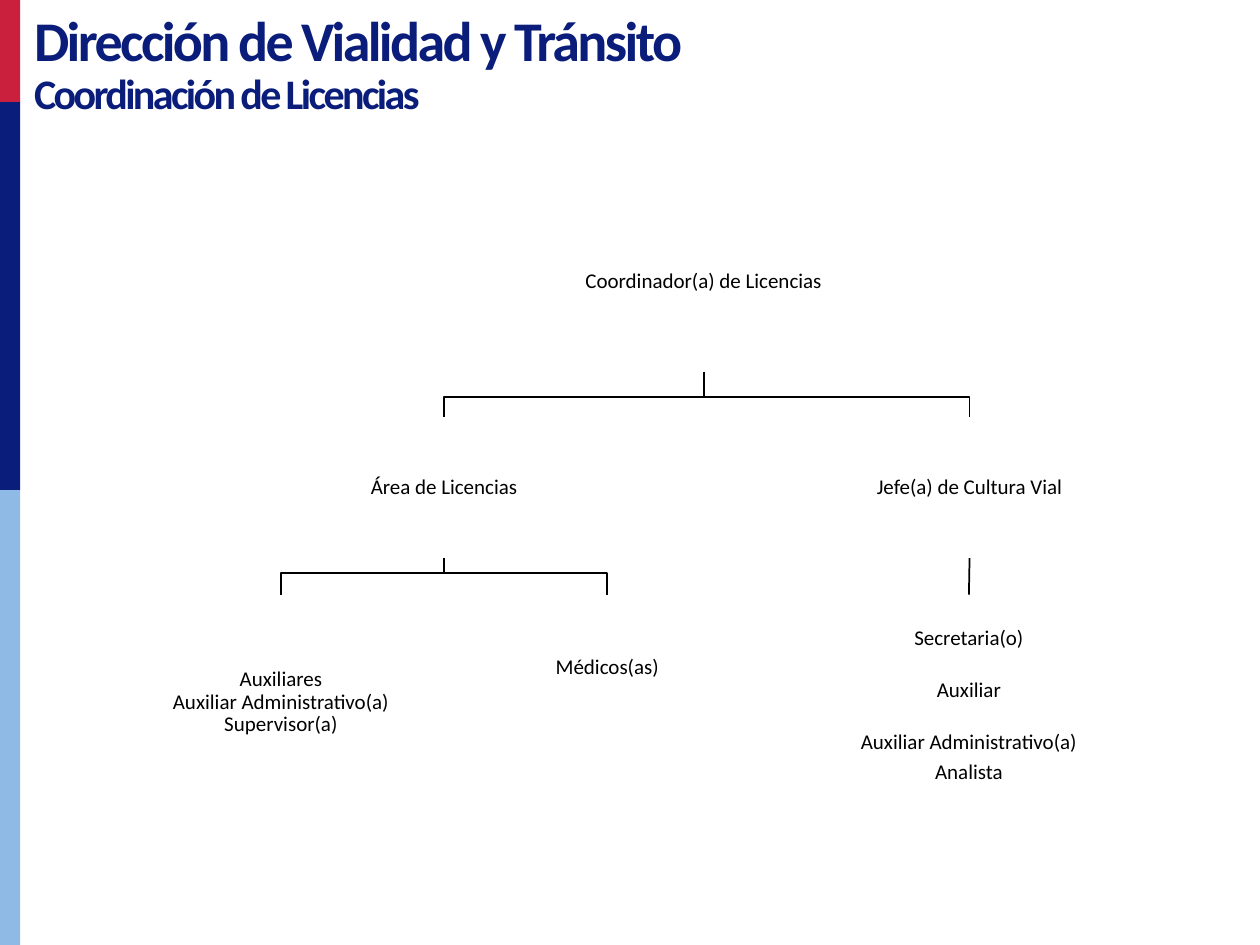
from pptx import Presentation
from pptx.dml.color import RGBColor
from pptx.enum.shapes import MSO_CONNECTOR, MSO_SHAPE
from pptx.enum.text import MSO_ANCHOR, MSO_AUTO_SIZE, PP_ALIGN
from pptx.oxml.ns import qn
from pptx.util import Inches, Pt
from lxml import etree

RECT = MSO_SHAPE.RECTANGLE
STRAIGHT = MSO_CONNECTOR.STRAIGHT
MIDDLE, TOP = MSO_ANCHOR.MIDDLE, MSO_ANCHOR.TOP
CENTER, LEFT = PP_ALIGN.CENTER, PP_ALIGN.LEFT
FONT = "Calibri"
COLORS = {"red": "CA1F3D", "navy": "0A1D7A", "sky": "8FBAE5",
          "white": "FFFFFF", "black": "000000"}


def rgb(name):
    return RGBColor.from_string(COLORS[name])


def add_run(para, text, size, color, bold=False):
    run = para.add_run()
    run.text = text
    font = run.font
    font.name, font.size, font.bold = FONT, Pt(size), bold
    font.color.rgb = rgb(color)
    return run


def add_rect(slide, left, top, width, height, color):
    rect = slide.shapes.add_shape(
        RECT, Inches(left), Inches(top), Inches(width), Inches(height))
    rect.shadow.inherit = False
    rect.fill.solid()
    rect.fill.fore_color.rgb = rgb(color)
    rect.line.fill.background()
    return rect


def add_bars(slide):
    top = 0
    for color, height in (("red", 0.81), ("navy", 3.08), ("sky", 3.61)):
        add_rect(slide, 0, top, 0.16, height, color)
        top += height


def add_title(slide):
    title = slide.shapes.title
    title.left, title.top = Inches(0.17), Inches(0.05)
    title.width, title.height = Inches(7.46), Inches(0.95)
    frame = title.text_frame
    frame.auto_size = MSO_AUTO_SIZE.SHAPE_TO_FIT_TEXT
    frame.vertical_anchor = TOP
    lines = (("Dirección de Vialidad y Tránsito", 32),
             ("Coordinación de Licencias", 24))
    for i, (text, size) in enumerate(lines):
        para = frame.add_paragraph() if i else frame.paragraphs[0]
        para.alignment, para.line_spacing = LEFT, 0.9
        para.space_before = Pt(0)
        run = add_run(para, text, size, "navy", True)
        run.font._element.set("spc", "-150")


def add_box(slide, left, top, width, height, lines, lift=0):
    """Lines are (text, points before); lift is the extra bottom inset."""
    box = add_rect(slide, left, top, width, height, "white")
    frame = box.text_frame
    frame.word_wrap = True
    frame.vertical_anchor = MIDDLE
    frame.margin_left = frame.margin_right = frame.margin_top = Inches(0.01)
    frame.margin_bottom = Inches(0.01 + lift)
    for i, (text, gap) in enumerate(lines):
        para = frame.add_paragraph() if i else frame.paragraphs[0]
        para.alignment, para.line_spacing = CENTER, 0.9
        para.space_before = Pt(gap)
        add_run(para, text, 12, "black")
    return box


def style_line(shape):
    shape.line.color.rgb = rgb("black")
    shape.line.width = Pt(1)


def add_branch(slide, boss, child, drop):
    """Bent line that turns at the given drop below the boss box."""
    x, y = boss.left + boss.width // 2, boss.top + boss.height
    end, bend = child.left + child.width // 2, y + Inches(drop)
    path = slide.shapes.build_freeform(x, y)
    path.add_line_segments(
        [(x, bend), (end, bend), (end, child.top)], close=False)
    branch = path.convert_to_shape()
    branch.shadow.inherit = False
    branch.fill.background()
    style_line(branch)


def add_link(slide, boss, child):
    link = slide.shapes.add_connector(STRAIGHT, 0, 0, 0, 0)
    link.begin_connect(boss, 2)
    link.end_connect(child, 0)
    style_line(link)
    etree.SubElement(link._element.spPr, qn("a:effectLst"))


def add_chart(slide):
    head = add_box(slide, 4.02, 1.7, 3.13, 1.25,
                   [("Coordinador(a) de Licencias", 0)], 0.18)
    area = add_box(slide, 2.17, 3.31, 2.71, 1.12,
                   [("Área de Licencias", 0)])
    chief = add_box(slide, 6.34, 3.31, 2.71, 1.12,
                    [("Jefe(a) de Cultura Vial", 0)])
    aides = add_box(slide, 1.11, 4.72, 2.24, 1.89,
                    [("Auxiliares", 0), ("Auxiliar Administrativo(a)", 0),
                     ("Supervisor(a)", 0)], 0.18)
    medics = add_box(slide, 3.7, 4.72, 2.24, 1.16, [("Médicos(as)", 0)])
    staff = add_box(slide, 6.57, 4.72, 2.24, 1.94,
                    [("Secretaria(o)", 0), ("Auxiliar", 17),
                     ("Auxiliar Administrativo(a)", 17),
                     ("Analista", 4)], 0.18)
    for child in (area, chief):
        add_branch(slide, head, child, 0.2)
    for child in (aides, medics):
        add_branch(slide, area, child, 0.12)
    add_link(slide, chief, staff)


def main():
    deck = Presentation()
    deck.slide_width, deck.slide_height = Inches(10), Inches(7.5)
    slide = deck.slides.add_slide(deck.slide_layouts[5])
    add_bars(slide)
    add_title(slide)
    add_chart(slide)
    deck.save("out.pptx")


if __name__ == "__main__":
    main()
